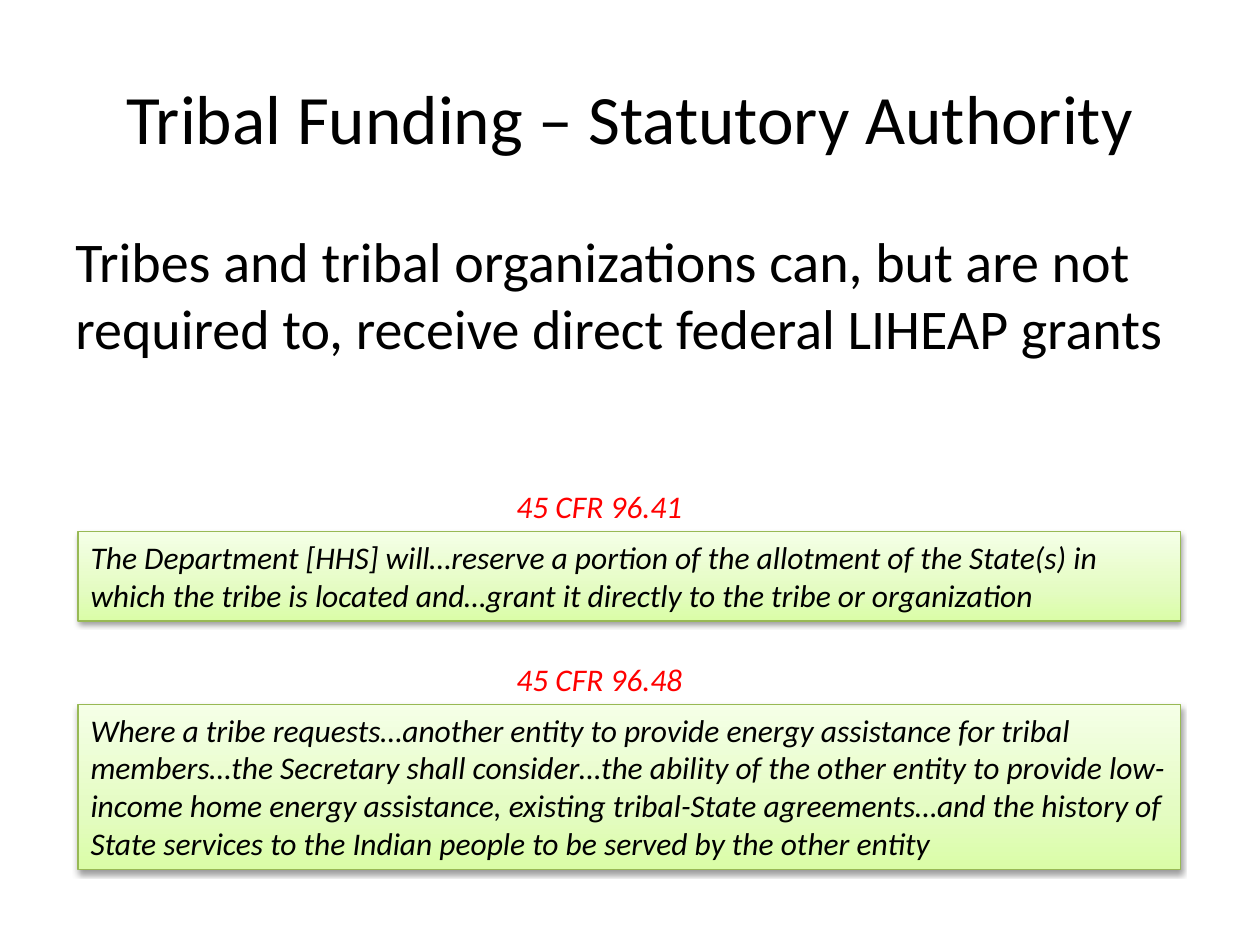
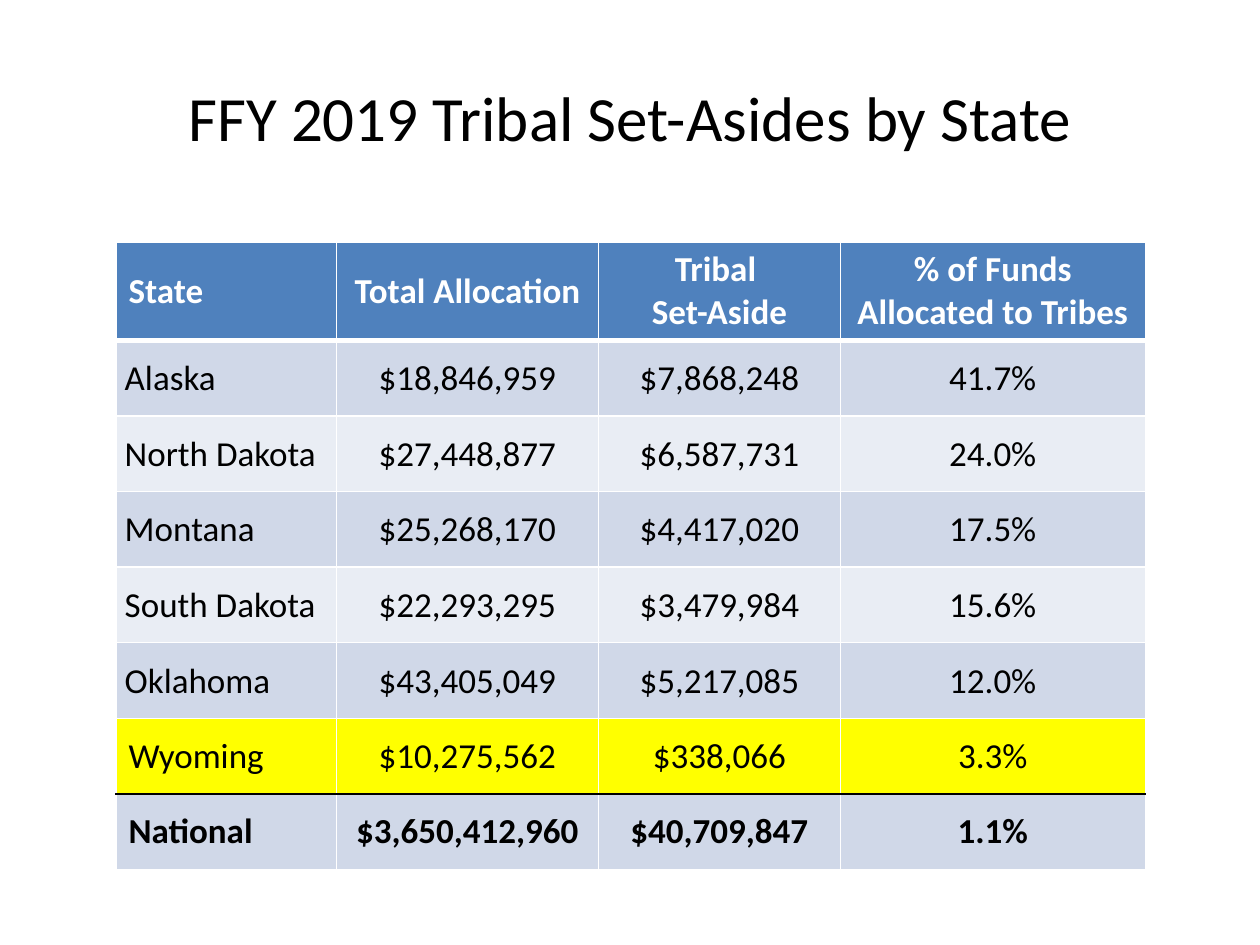
from copy import deepcopy

from pptx import Presentation
from pptx import util as u
from pptx.dml.color import RGBColor
from pptx.enum import shapes, text
from pptx.oxml import parse_xml
from pptx.oxml.ns import nsdecls, qn

FONT = "Calibri"
BLACK, WHITE, RED = "000000", "FFFFFF", "FF0000"
BLUE, PALE, LIGHT, YELLOW = "4F81BD", "D0D8E8", "E9EDF4", "FFFF00"
GREEN = "98B955"
GREENS = [("DAFDA7", 0), ("E4FCC2", 0.35), ("F5FFE7", 1)]
LEFT, MID = text.PP_ALIGN.LEFT, text.PP_ALIGN.CENTER

RULES = [
    ("45 CFR 96.41", 4.22, 0.71,
     "The Department [HHS] will…reserve a portion of the allotment of the "
     "State(s) in which the tribe is located and…grant it directly to the "
     "tribe or organization"),
    ("45 CFR 96.48", 5.59, 1.31,
     "Where a tribe requests…another entity to provide energy assistance for "
     "tribal members…the Secretary shall consider…the ability of the other "
     "entity to provide low-income home energy assistance, existing "
     "tribal-State agreements…and the history of State services to the "
     "Indian people to be served by the other entity"),
]
STATES = [
    ("State", "Total Allocation", "Tribal \nSet-Aside",
     "% of Funds Allocated to Tribes"),
    ("Alaska", "$18,846,959", "$7,868,248", "41.7%"),
    ("North Dakota", "$27,448,877", "$6,587,731", "24.0%"),
    ("Montana", "$25,268,170", "$4,417,020", "17.5%"),
    ("South Dakota", "$22,293,295", "$3,479,984", "15.6%"),
    ("Oklahoma", "$43,405,049", "$5,217,085", "12.0%"),
    ("Wyoming", "$10,275,562", "$338,066", "3.3%"),
    ("National", "$3,650,412,960", "$40,709,847", "1.1%"),
]
WIDTHS = [1.75, 2.08, 1.92, 2.42]
HEAD, ROW = 0.77, 0.6


def rgb(code):
    return RGBColor.from_string(code)


def place(*sizes):
    return [u.Inches(size) for size in sizes]


def write(frame, words, size, color=BLACK, align=LEFT, **style):
    """Fill a text frame, one paragraph for each line of words."""
    frame.text = words
    for para in frame.paragraphs:
        para.alignment = align
        font = para.font
        font.color.rgb = rgb(color)
        for key, value in {"name": FONT, "size": u.Pt(size), **style}.items():
            setattr(font, key, value)


def add_page(deck, words, size):
    slide = deck.slides.add_slide(deck.slide_layouts[5])
    title = slide.shapes.title
    title.left, title.top, title.width, title.height = place(0.5, 0.3, 9, 1.25)
    title.text_frame.vertical_anchor = text.MSO_ANCHOR.MIDDLE
    write(title.text_frame, words, size, align=MID)
    return slide


def add_text(slide, at, words, size, **style):
    frame = slide.shapes.add_textbox(*place(*at)).text_frame
    frame.word_wrap = True
    write(frame, words, size, **style)


def add_quote(slide, at, words):
    """Add a green box with a gradient and a soft shadow."""
    box = slide.shapes.add_shape(shapes.MSO_SHAPE.RECTANGLE, *place(*at))
    box.fill.gradient()
    box.fill.gradient_angle = 90
    props = box.element.spPr
    stops = props.find(".//" + qn("a:gsLst"))
    stops.insert(1, deepcopy(stops[0]))
    for stop, (color, spot) in zip(box.fill.gradient_stops, GREENS):
        stop.color.rgb = rgb(color)
        stop.position = spot
    box.line.color.rgb = rgb(GREEN)
    box.line.width = u.Pt(0.75)
    box.shadow.inherit = False
    props.find(qn("a:effectLst")).append(parse_xml(
        f'<a:outerShdw {nsdecls("a")} blurRad="{u.Pt(3.1)}" '
        f'dist="{u.Pt(1.6)}" dir="5400000" rotWithShape="0">'
        f'<a:srgbClr val="{BLACK}"><a:alpha val="38000"/></a:srgbClr>'
        '</a:outerShdw>'))
    frame = box.text_frame
    frame.word_wrap = True
    frame.vertical_anchor = text.MSO_ANCHOR.TOP
    write(frame, words, 18, italic=True)


def edge(cell, side, color=WHITE, width=1):
    cell._tc.get_or_add_tcPr().append(parse_xml(
        f'<a:ln{side} {nsdecls("a")} w="{u.Pt(width)}"><a:solidFill>'
        f'<a:srgbClr val="{color}"/></a:solidFill></a:ln{side}>'))


def row_look(row, last):
    """Give the fill, text colour, top edge and bottom edge of a row."""
    top, base, ink = (WHITE, 1), (WHITE, 1), BLACK
    fill = PALE if row % 2 else LIGHT
    if row == 0:
        fill, ink, base = BLUE, WHITE, (WHITE, 3)
    elif row == 1:
        top = (WHITE, 3)
    elif row == last - 1:
        fill, base = YELLOW, (BLACK, 1)
    elif row == last:
        fill, top = PALE, (BLACK, 1)
    return fill, ink, top, base


def add_grid(slide, left, top, rows):
    last = len(rows) - 1
    size = place(left, top, sum(WIDTHS), HEAD + ROW * last)
    grid = slide.shapes.add_table(len(rows), len(WIDTHS), *size).table
    grid.horz_banding = False
    for col, width in zip(grid.columns, WIDTHS):
        col.width = u.Inches(width)
    for r, values in enumerate(rows):
        grid.rows[r].height = u.Inches(ROW if r else HEAD)
        fill, ink, upper, lower = row_look(r, last)
        tight = 0 < r < last - 1
        for c, value in enumerate(values):
            cell = grid.cell(r, c)
            edge(cell, "L")
            edge(cell, "R")
            edge(cell, "T", *upper)
            edge(cell, "B", *lower)
            cell.fill.solid()
            cell.fill.fore_color.rgb = rgb(fill)
            cell.vertical_anchor = text.MSO_ANCHOR.MIDDLE
            if tight:
                cell.margin_left = u.Inches(0.01 if c else 0.07)
                cell.margin_right = cell.margin_top = u.Inches(0.01)
                cell.margin_bottom = 0
            write(cell.text_frame, value, 20, ink, MID if c else LEFT,
                  bold=r in (0, last))


def main():
    deck = Presentation()
    deck.slide_width, deck.slide_height = place(10, 7.5)

    law = add_page(deck, "Tribal Funding – Statutory Authority", 39.6)
    add_text(law, (0.5, 1.75, 9, 1.25),
             "Tribes and tribal organizations can, but are not required to, "
             "receive direct federal LIHEAP grants", 32)
    for code, top, height, words in RULES:
        add_quote(law, (0.62, top, 8.75, height), words)
        add_text(law, (4, top - 0.4, 2.25, 0.4), code, 18, color=RED,
                 italic=True)

    funds = add_page(deck, "FFY 2019 Tribal Set-Asides by State", 36)
    add_grid(funds, 0.92, 1.92, STATES)
    deck.save("out.pptx")


if __name__ == "__main__":
    main()
